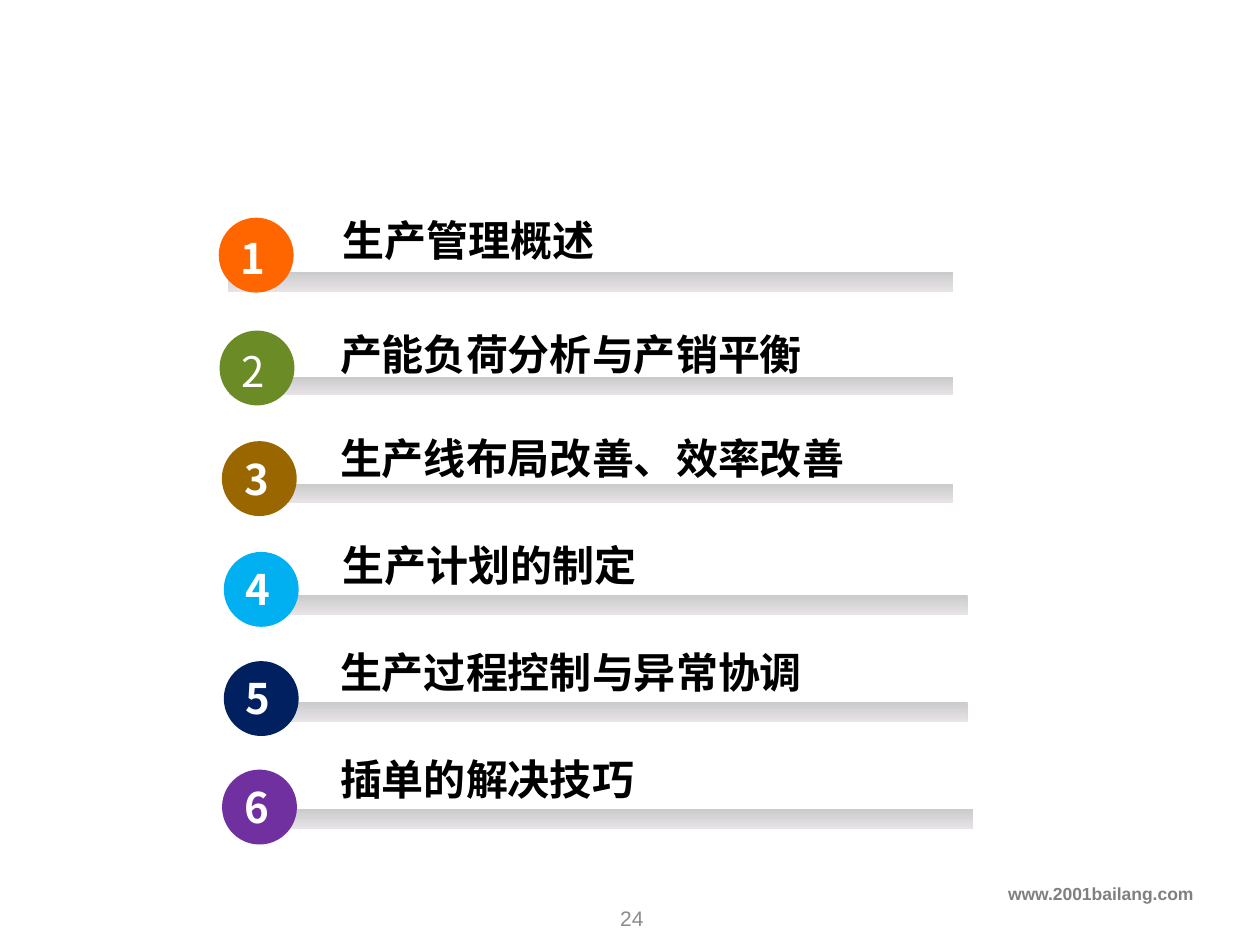
from lxml import etree
from pptx import Presentation
from pptx.dml.color import RGBColor
from pptx.enum.shapes import MSO_SHAPE
from pptx.enum.text import MSO_ANCHOR, MSO_AUTO_SIZE, PP_ALIGN
from pptx.oxml.ns import qn
from pptx.util import Pt

RECTANGLE, OVAL = MSO_SHAPE.RECTANGLE, MSO_SHAPE.OVAL
TOP, MIDDLE = MSO_ANCHOR.TOP, MSO_ANCHOR.MIDDLE
LEFT, CENTER, RIGHT = PP_ALIGN.LEFT, PP_ALIGN.CENTER, PP_ALIGN.RIGHT
GROW = MSO_AUTO_SIZE.SHAPE_TO_FIT_TEXT

WHITE = RGBColor(0xFF, 0xFF, 0xFF)
BLACK = RGBColor(0x00, 0x00, 0x00)
BAR_TOP = RGBColor(0xCB, 0xCB, 0xCB)
BAR_BOTTOM = RGBColor(0xE7, 0xE3, 0xE7)
SITE_GRAY = RGBColor(0x80, 0x80, 0x80)
NUMBER_GRAY = RGBColor(0x8C, 0x8C, 0x8C)
ORANGE = RGBColor(0xFF, 0x66, 0x00)
GREEN = RGBColor(0x6A, 0x8B, 0x25)
BROWN = RGBColor(0x99, 0x66, 0x00)
SKY = RGBColor(0x00, 0xB0, 0xF0)
NAVY = RGBColor(0x00, 0x20, 0x60)
PURPLE = RGBColor(0x70, 0x30, 0xA0)

HEADING_FONT = "Noto Sans CJK SC"
SMALL_FONT = "Arial"
CIRCLE = 42.8

deck = Presentation()
deck.slide_width, deck.slide_height = Pt(720), Pt(540)
page = deck.slides.add_slide(deck.slide_layouts[6])


def add_text(text, left, top, width, height, font, size, color, bold, align=LEFT, anchor=TOP):
    box = page.shapes.add_textbox(Pt(left), Pt(top), Pt(width), Pt(height))
    frame = box.text_frame
    frame.word_wrap = True
    frame.vertical_anchor = anchor
    frame.text = text
    para = frame.paragraphs[0]
    para.alignment = align
    span = para.runs[0]
    span.font.name, span.font.size, span.font.bold = font, Pt(size), bold
    span.font.color.rgb = color
    east_asian = etree.SubElement(span._r.get_or_add_rPr(), qn("a:ea"))
    east_asian.set("typeface", font)
    return box


def add_plain_shape(kind, left, top, width, height):
    shape = page.shapes.add_shape(kind, Pt(left), Pt(top), Pt(width), Pt(height))
    shape.shadow.inherit = False
    shape.line.fill.background()
    return shape


# Site address
add_text("www.2001bailang.com", 0, 501.1, 689, 25.2, SMALL_FONT, 10, SITE_GRAY, True, RIGHT)

# Chapters: text, color, bold number, bar (left, top, width, height),
# circle (left, top), number (left, top), heading (left, top)
chapters = [
    ("生产管理概述", ORANGE, True, (130.3, 155.5, 414.3, 11.4),
     (125, 124.4), (130.5, 129.6), (188.6, 118.8)),
    ("产能负荷分析与产销平衡", GREEN, False, (131, 215.6, 413.6, 10.2),
     (125.5, 188.9), (131, 193.7), (187.2, 184.3)),
    ("生产线布局改善、效率改善", BROWN, True, (139, 276.6, 405.6, 10.8),
     (126.8, 252.1), (132.5, 255.6), (187.2, 243.4)),
    ("生产计划的制定", SKY, True, (139, 340, 414, 11.4),
     (127.9, 315.4), (133.2, 318.5), (188.6, 304.6)),
    ("生产过程控制与异常协调", NAVY, True, (139, 401.1, 414, 11.4),
     (127.9, 377.8), (133.2, 380.9), (187.2, 365.8)),
    ("插单的解决技巧", PURPLE, True, (142, 462.3, 414, 11.4),
     (126.9, 439.8), (132.5, 442.8), (187.2, 427)),
]

for number, (heading, color, bold, bar_area, circle_at, number_at, heading_at) in enumerate(chapters, 1):
    bar = add_plain_shape(RECTANGLE, *bar_area)
    bar.fill.gradient()
    bar.fill.gradient_angle = 270
    for stop, position, shade in zip(bar.fill.gradient_stops, (0, 1), (BAR_TOP, BAR_BOTTOM)):
        stop.position = position
        stop.color.rgb = shade

    circle = add_plain_shape(OVAL, *circle_at, CIRCLE, CIRCLE)
    circle.fill.solid()
    circle.fill.fore_color.rgb = color

    number_box = add_text(str(number), *number_at, 27, 36, HEADING_FONT, 24, WHITE, bold)
    heading_box = add_text(heading, *heading_at, 351, 36, HEADING_FONT, 24, BLACK, True)
    for box in (number_box, heading_box):
        box.text_frame.auto_size = GROW

    # Hanging indent
    properties = heading_box.text_frame.paragraphs[0]._p.get_or_add_pPr()
    properties.set("marL", str(Pt(36)))
    properties.set("indent", str(-Pt(36)))

# Page number
add_text("24", 280.1, 510.5, 162, 28.8, SMALL_FONT, 12, NUMBER_GRAY, False, CENTER, MIDDLE)

deck.save("out.pptx")
